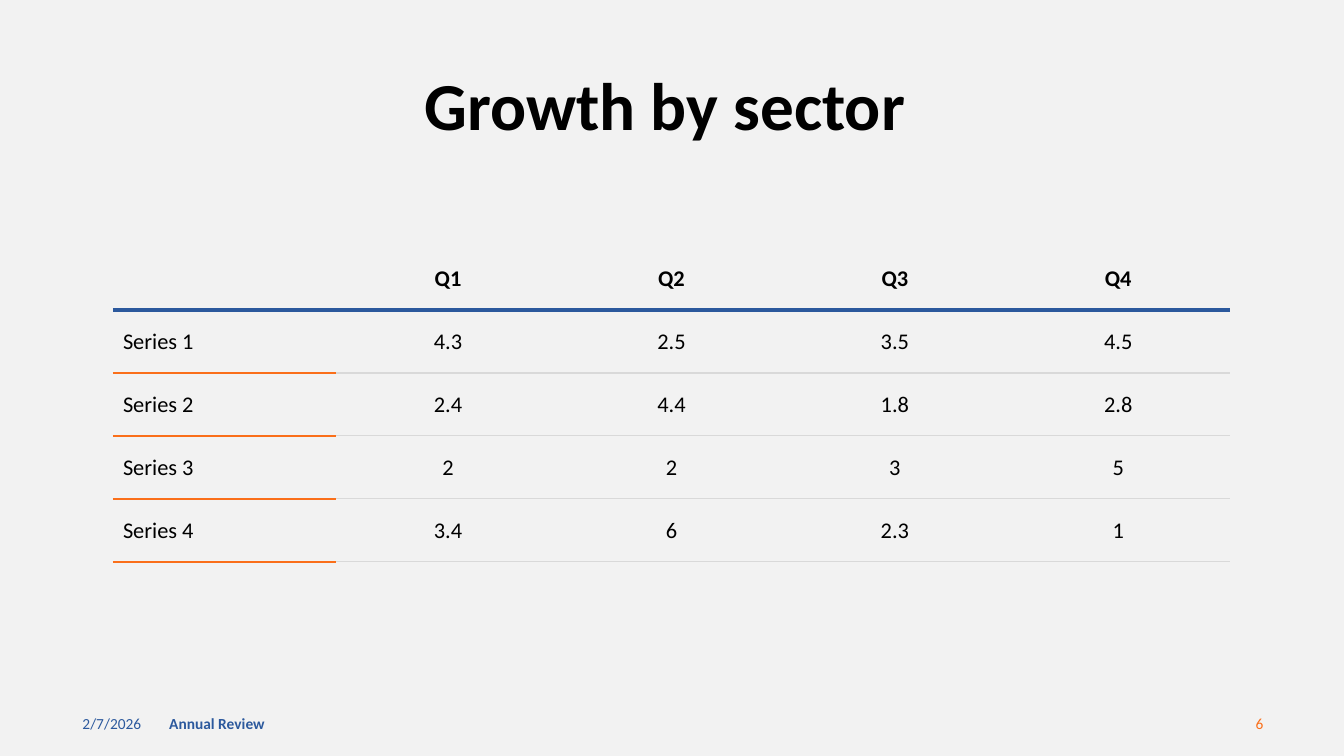
from lxml.etree import SubElement
from pptx import Presentation
from pptx.dml.color import RGBColor
from pptx.enum.text import MSO_ANCHOR, PP_ALIGN
from pptx.oxml.ns import qn
from pptx.util import Inches, Pt

BLUE, ORANGE, GRAY, BLACK = "2C599D", "FA6F1A", "D9D9D9", "000000"


def style(p, size, color, bold=False, align=PP_ALIGN.LEFT):
    p.alignment = align
    p.font.name = "Calibri"
    p.font.size = Pt(size)
    p.font.bold = bold
    p.font.color.rgb = RGBColor.from_string(color)


def border(cell, side, color, width):
    ln = SubElement(cell._tc.get_or_add_tcPr(), qn(f"a:{side}"), w=str(Pt(width)))
    fill = SubElement(ln, qn("a:solidFill"))
    SubElement(fill, qn("a:srgbClr"), val=color)


prs = Presentation()
prs.slide_width, prs.slide_height = Inches(13.33), Inches(7.5)
s = prs.slides.add_slide(prs.slide_layouts[6])
s.background.fill.solid()
s.background.fill.fore_color.rgb = RGBColor.from_string("F2F2F2")

# Footer and title
texts = [
    ("2/7/2026", 0.72, 6.98, 3, 0.4, 11, BLUE, False, PP_ALIGN.LEFT),
    ("Annual Review", 1.58, 6.98, 4.5, 0.4, 11, BLUE, True, PP_ALIGN.LEFT),
    ("6", 9.63, 6.98, 3, 0.4, 11, ORANGE, False, PP_ALIGN.RIGHT),
    ("Growth by sector ", 0.92, 0.69, 11.5, 0.77, 48, BLACK, True, PP_ALIGN.CENTER),
]
for text, x, y, w, h, size, color, bold, align in texts:
    tf = s.shapes.add_textbox(Inches(x), Inches(y), Inches(w), Inches(h)).text_frame
    tf.word_wrap = True
    tf.vertical_anchor = MSO_ANCHOR.MIDDLE
    p = tf.paragraphs[0]
    p.text = text
    style(p, size, color, bold, align)
p.line_spacing = 0.9  # title

# Growth table, with an empty last row
rows = [
    ["", "Q1", "Q2", "Q3", "Q4"],
    ["Series 1", "4.3", "2.5", "3.5", "4.5"],
    ["Series 2", "2.4", "4.4", "1.8", "2.8"],
    ["Series 3", "2", "2", "3", "5"],
    ["Series 4", "3.4", "6", "2.3", "1"],
    [""] * 5,
]
frame = s.shapes.add_table(len(rows), 5, Inches(1.12), Inches(2.45),
                           Inches(11.08), Inches(3.75))
table = frame.table
table.horz_banding = False
# Plain style without grid
for style_id in frame.element.iter(qn("a:tableStyleId")):
    style_id.text = "{2D5ABB26-0587-4C30-8999-92F81FD0307C}"

for i, row in enumerate(rows):
    for j, value in enumerate(row):
        cell = table.cell(i, j)
        cell.vertical_anchor = MSO_ANCHOR.MIDDLE
        p = cell.text_frame.paragraphs[0]
        p.text = value
        style(p, 16, BLACK, i == 0, PP_ALIGN.CENTER if j else PP_ALIGN.LEFT)
        # Rules: blue under the header, orange under series names, gray elsewhere
        row_rule = (GRAY, 1) if j else (ORANGE, 1.5)
        if i > 0:
            border(cell, "lnT", *((BLUE, 3) if i == 1 else row_rule))
        if i < len(rows) - 1:
            border(cell, "lnB", *((BLUE, 3) if i == 0 else row_rule))
        cell.fill.background()

prs.save("out.pptx")
